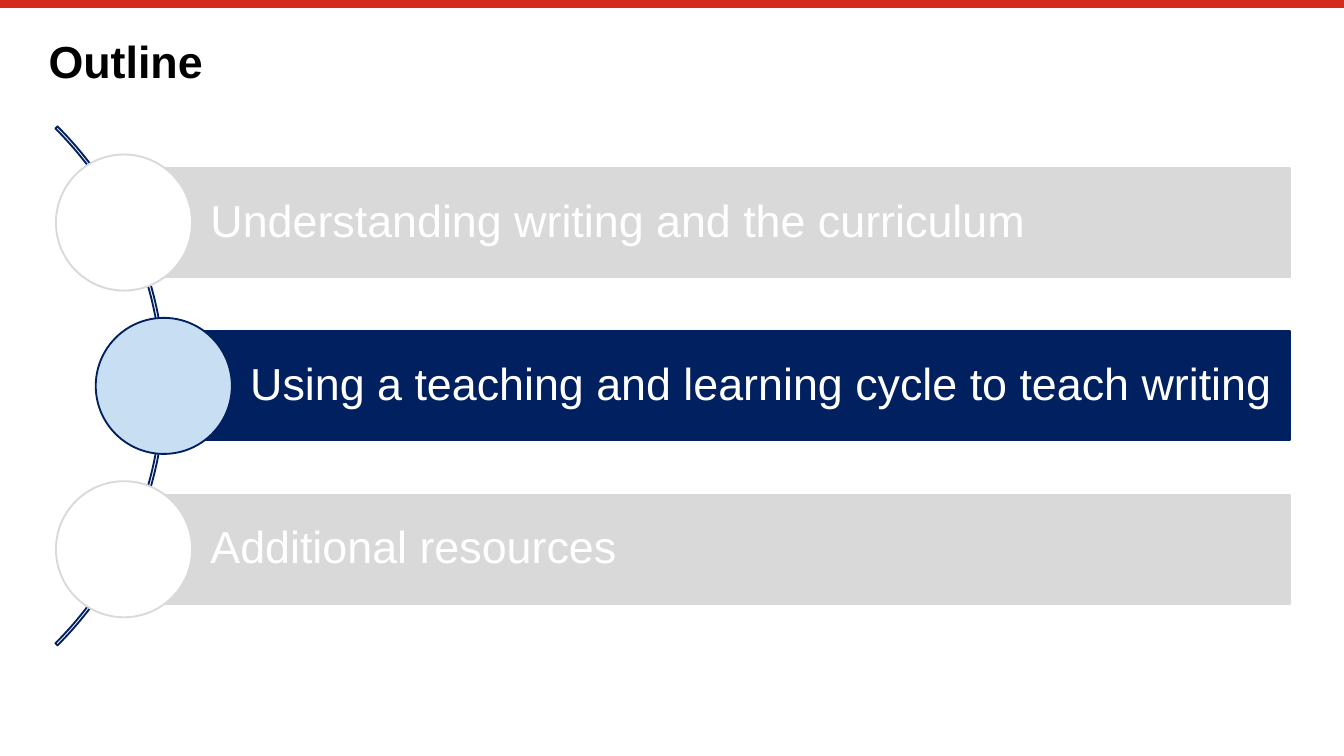
from pptx import Presentation
from pptx.dml.color import RGBColor
from pptx.enum.shapes import MSO_CONNECTOR, MSO_SHAPE
from pptx.enum.text import MSO_ANCHOR, PP_ALIGN
from pptx.oxml.ns import qn
from pptx.util import Pt
from lxml.etree import SubElement

RED = RGBColor(0xD5, 0x2B, 0x1E)
NAVY = RGBColor(0x00, 0x20, 0x60)
SKY = RGBColor(0xC8, 0xDE, 0xF2)
GREY = RGBColor(0xD9, 0xD9, 0xD9)
WHITE = RGBColor(0xFF, 0xFF, 0xFF)
BLACK = RGBColor(0x00, 0x00, 0x00)

SLIDE_WIDTH, SLIDE_HEIGHT = 720, 405
TOPICS = [
    ("Understanding writing and the curriculum", False),
    ("Using a teaching and learning cycle to teach writing", True),
    ("Additional resources", False),
]


def add_outlined(slide, preset, left, top, width, height, fill, outline):
    shape = slide.shapes.add_shape(preset, Pt(left), Pt(top), Pt(width), Pt(height))
    shape.shadow.inherit = False
    if fill is None:
        shape.fill.background()
    else:
        shape.fill.solid()
        shape.fill.fore_color.rgb = fill
    shape.line.color.rgb = outline
    shape.line.width = Pt(1)
    return shape


def write_text(frame, text, color, margins, anchor, bold=False):
    frame.word_wrap = True
    frame.vertical_anchor = anchor
    frame.margin_left, frame.margin_top, frame.margin_right, frame.margin_bottom = map(Pt, margins)
    paragraph = frame.paragraphs[0]
    paragraph.text = text
    paragraph.alignment = PP_ALIGN.LEFT
    paragraph.line_spacing = 0.9
    paragraph.font.name = "Arial"
    paragraph.font.size = Pt(24)
    paragraph.font.bold = bold
    paragraph.font.color.rgb = color


def add_top_rule(slide, width, thickness):
    middle = Pt(thickness / 2)
    rule = slide.shapes.add_connector(MSO_CONNECTOR.STRAIGHT, 0, middle, Pt(width), middle)
    rule.line.color.rgb = RED
    rule.line.width = Pt(thickness)
    SubElement(rule._element.spPr, qn("a:effectLst"))


def add_title(slide, left, top, width, height):
    title = slide.shapes.add_textbox(Pt(left), Pt(top), Pt(width), Pt(height))
    write_text(title.text_frame, "Outline", BLACK, (0, 0, 0, 0), MSO_ANCHOR.TOP, bold=True)


def add_topic(slide, left, center, right, topic, current):
    bar_height, diameter = 58.4, 72.9
    bar_left = left + diameter / 2
    accent = NAVY if current else GREY
    bar = add_outlined(slide, MSO_SHAPE.RECTANGLE, bar_left, center - bar_height / 2,
                       right - bar_left, bar_height, accent, accent)
    write_text(bar.text_frame, topic, WHITE, (46.3, 5, 5, 5), MSO_ANCHOR.MIDDLE)
    add_outlined(slide, MSO_SHAPE.OVAL, left, center - diameter / 2, diameter, diameter,
                 SKY if current else WHITE, accent)


def add_topic_arc(slide, left, top, width, height):
    arc_size, arc_bulge, current_indent = 393.2, 58.4, 21.3
    middle = top + height / 2
    pitch = height / len(TOPICS)
    arc = add_outlined(slide, MSO_SHAPE.BLOCK_ARC, left + arc_bulge - arc_size,
                       middle - arc_size / 2, arc_size, arc_size, None, NAVY)
    arc.adjustments[0] = 189
    arc.adjustments[1] = 27
    arc.adjustments[2] = 0.004
    for row, (topic, current) in enumerate(TOPICS):
        indent = current_indent if current else 0
        add_topic(slide, left + indent, top + pitch * (row + 0.5), left + width, topic, current)


def main():
    presentation = Presentation()
    presentation.slide_width = Pt(SLIDE_WIDTH)
    presentation.slide_height = Pt(SLIDE_HEIGHT)
    slide = presentation.slides.add_slide(presentation.slide_layouts[6])
    add_top_rule(slide, SLIDE_WIDTH, 4.2)
    add_title(slide, 26, 21.6, 669, 28)
    add_topic_arc(slide, 30, 75.5, 661, 262.5)
    presentation.save("out.pptx")


if __name__ == "__main__":
    main()
